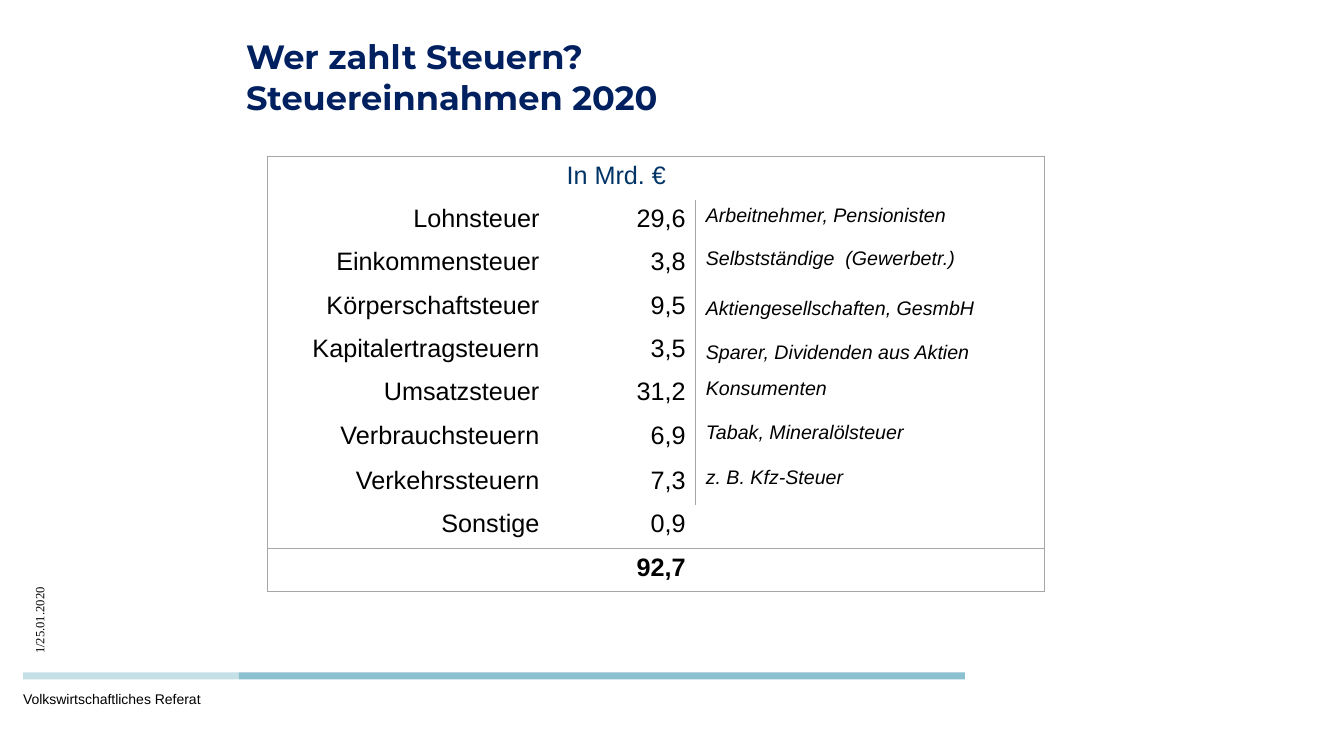
from lxml import etree
from pptx import Presentation
from pptx.dml.color import RGBColor
from pptx.enum.shapes import MSO_SHAPE
from pptx.enum.text import MSO_ANCHOR, MSO_AUTO_SIZE, PP_ALIGN
from pptx.oxml.ns import qn
from pptx.util import Inches, Pt

GREY, TEAL, NAVY, BLUE, BLACK = "A6A6A6", "8AC0CF", "002060", "003366", "000000"
LEFT, RIGHT = PP_ALIGN.LEFT, PP_ALIGN.RIGHT
COL_WIDTHS = (2.8, 1.45, 3.46)
# tax, revenue, payers, line spacing of the payers
TAXES = [
    ("Lohnsteuer", "29,6", "Arbeitnehmer, Pensionisten", 1),
    ("Einkommensteuer", "3,8", "Selbstständige  (Gewerbetr.)", 1),
    ("Körperschaftsteuer", "9,5", "Aktiengesellschaften, GesmbH", 1.3),
    ("Kapitalertragsteuern", "3,5", "Sparer, Dividenden aus Aktien", 1.3),
    ("Umsatzsteuer", "31,2", "Konsumenten", 1),
    ("Verbrauchsteuern", "6,9", "Tabak, Mineralölsteuer", 1),
    ("Verkehrssteuern", "7,3", "z. B. Kfz-Steuer", 1),
    ("Sonstige", "0,9", "", 1),
]
TOTAL_ROW = len(TAXES) + 1


def rgb(color):
    return RGBColor.from_string(color)


def style(p, size, color=BLACK, name="Arial", bold=False, italic=False, align=LEFT):
    p.alignment = align
    f = p.font
    f.size, f.name, f.bold, f.italic = Pt(size), name, bold, italic
    f.color.rgb = rgb(color)


def add_title(s, text):
    sp = s.shapes.title
    sp.left, sp.top, sp.width, sp.height = map(Inches, (2.34, 0.21, 8.58, 1.1))
    tf = sp.text_frame
    tf.text = text
    tf.auto_size = MSO_AUTO_SIZE.NONE
    tf.vertical_anchor = MSO_ANCHOR.MIDDLE
    style(tf.paragraphs[0], 24, NAVY, "Montserrat", bold=True)


def add_label(s, text, x, y, w, h, size, name, rotation=0):
    sp = s.shapes.add_textbox(*map(Inches, (x, y, w, h)))
    sp.rotation = rotation
    tf = sp.text_frame
    tf.word_wrap = True
    tf.text = text
    style(tf.paragraphs[0], size, name=name)


def add_bar(s, x, w, opacity=100):
    sp = s.shapes.add_shape(MSO_SHAPE.RECTANGLE, *map(Inches, (x, 6.67, w, 0.07)))
    sp.shadow.inherit = False
    sp.line.fill.background()
    sp.fill.solid()
    sp.fill.fore_color.rgb = rgb(TEAL)
    if opacity < 100:
        clr = sp.fill._xPr.find(qn("a:solidFill"))[0]
        etree.SubElement(clr, qn("a:alpha"), val=str(opacity * 1000))


def set_borders(cell, sides):
    """Draw the sides named by the letters L, R, T, B and hide the others."""
    tc_pr = cell._tc.get_or_add_tcPr()
    for side in "LRTB":
        ln = etree.SubElement(tc_pr, qn("a:ln" + side), w=str(Pt(1)))
        if side in sides:
            fill = etree.SubElement(ln, qn("a:solidFill"))
            etree.SubElement(fill, qn("a:srgbClr"), val=GREY)
        else:
            etree.SubElement(ln, qn("a:noFill"))


def border_sides(row, col):
    """Outer frame, a rule above the total, and a divider before the payers."""
    divided = 1 <= row < TOTAL_ROW - 1
    rules = {
        "L": col == 0 or col == 2 and divided,
        "R": col == 2 or col == 1 and divided,
        "T": row in (0, TOTAL_ROW),
        "B": row >= TOTAL_ROW - 1,
    }
    return [side for side, drawn in rules.items() if drawn]


def fill_cell(cell, text, size=18, spacing=1, **font):
    p = cell.text_frame.paragraphs[0]
    p.text = text
    p.line_spacing = spacing
    style(p, size, **font)


def add_tax_table(s):
    frame = s.shapes.add_table(TOTAL_ROW + 1, len(COL_WIDTHS), Inches(2.65),
                               Inches(1.55), Inches(sum(COL_WIDTHS)), Inches(4.32))
    table = frame.table
    table.first_row = table.horz_banding = False
    for column, width in zip(table.columns, COL_WIDTHS):
        column.width = Inches(width)
    for i, row in enumerate(table.rows):
        row.height = Inches(0.45 if i == 6 else 0.43)
        for j, cell in enumerate(row.cells):
            set_borders(cell, border_sides(i, j))
            cell.fill.background()

    unit = table.cell(0, 1)
    unit.margin_left = Inches(0.17)
    fill_cell(unit, "In Mrd. €", color=BLUE)
    for i, (tax, revenue, payers, spacing) in enumerate(TAXES, 1):
        fill_cell(table.cell(i, 0), tax, align=RIGHT)
        fill_cell(table.cell(i, 1), revenue, align=RIGHT)
        if payers:
            fill_cell(table.cell(i, 2), payers, 14, spacing, italic=True)
    fill_cell(table.cell(TOTAL_ROW, 1), "92,7", bold=True, align=RIGHT)


def main():
    prs = Presentation()
    prs.slide_width, prs.slide_height = Inches(13.33), Inches(7.5)
    s = prs.slides.add_slide(prs.slide_layouts[5])
    add_label(s, "Volkswirtschaftliches Referat", 0.13, 6.8, 3.78, 0.26, 10, "Arial")
    add_label(s, "1/25.01.2020", -0.28, 5.79, 1.34, 0.25, 9, "Times New Roman", 270)
    add_bar(s, 2.37, 7.2)
    add_bar(s, 0.23, 2.14, opacity=50)
    add_title(s, "Wer zahlt Steuern?\vSteuereinnahmen 2020")
    add_tax_table(s)
    prs.save("out.pptx")


if __name__ == "__main__":
    main()
